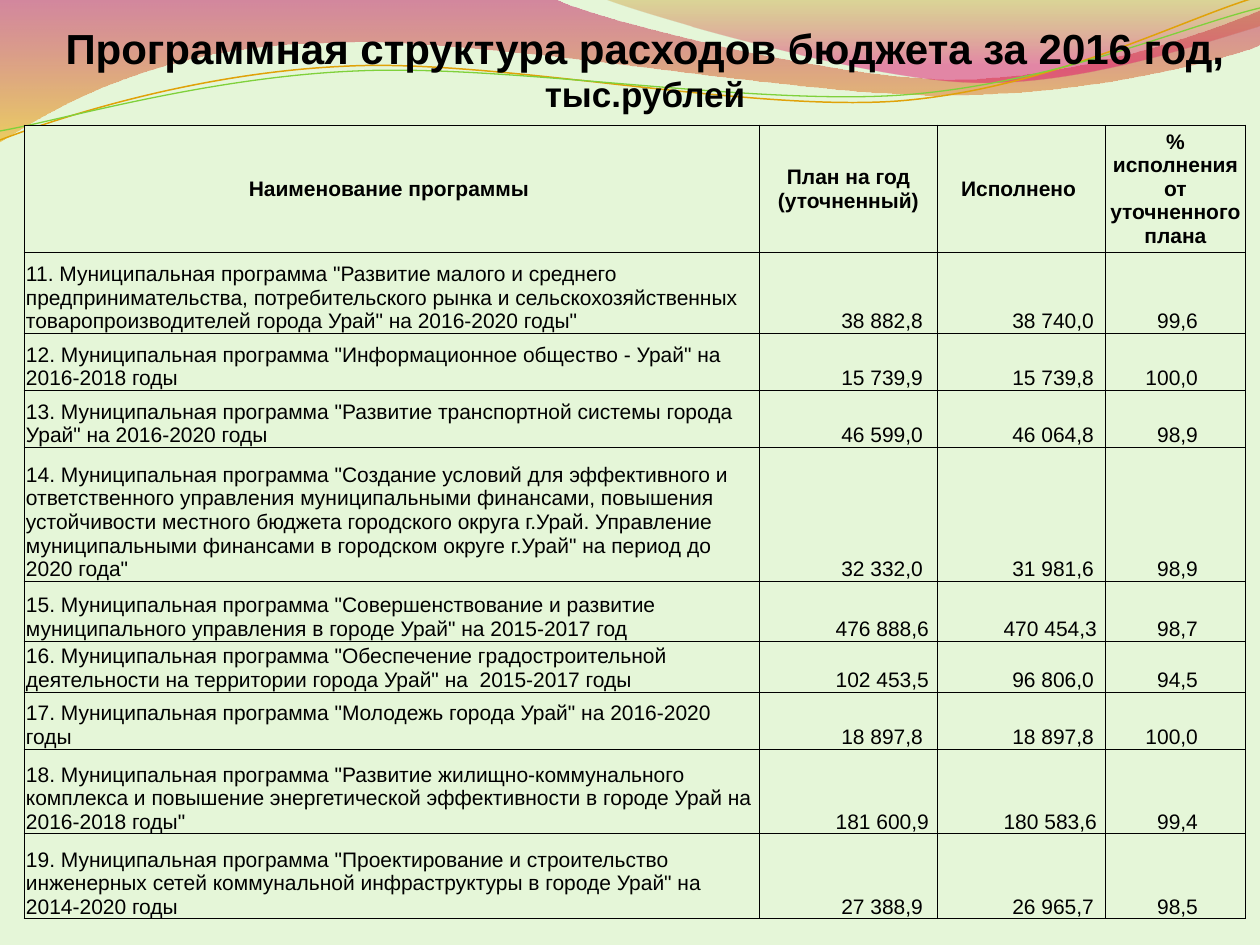
from lxml.etree import SubElement
from pptx import Presentation
from pptx.dml.color import RGBColor
from pptx.enum.text import MSO_ANCHOR as Anchor, PP_ALIGN as Align
from pptx.oxml.ns import qn
from pptx.util import Pt

SCALE = 914400 / 126
PAGE_BOX = (0, 0, 1260, 945)
FONT, INK, PAPER = "Arial", "000000", "E5F6D8"

BANDS = [
    ([(0, 0), (554, -1), (600, 21, 837, 79, 955, 79), (1074, 79, 1207, 33, 1260, 11),
      (1261, 45), (1239, 55, 1096, 96, 940, 95), (783, 95, 481, 35, 324, 43),
      (163, 45, 58, 105, -1, 142), (0, 0)],
     [("BD0059", 45, 0), ("F0AB00", 55, 1)]),
    ([(604, -1), (641, 14, 859, 78, 969, 82), (1079, 87, 1211, 40, 1260, 26), (1260, 0),
      (604, -1)],
     [("C38B00", 30, 0), ("E1006B", 45, 0.8)]),
]
WAVES = [
    ([(0, 140), (60, 117, 199, 72, 349, 66), (498, 59, 747, 112, 898, 101),
      (1050, 89, 1182, 19, 1257, -3)], "E0A209", 0.85),
    ([(0, 131), (59, 121, 207, 77, 357, 71), (508, 64, 752, 106, 903, 95),
      (1053, 84, 1185, 26, 1260, 8)], "7FD13B", 0.75),
]

HEADERS = ["Наименование программы ", "План на год (уточненный)", "Исполнено ",
           "% исполнения от уточненного плана"]
PROGRAMS = [
    ('11. Муниципальная программа "Развитие малого и среднего предпринимательства, '
     'потребительского рынка и сельскохозяйственных товаропроизводителей города Урай" '
     'на 2016-2020 годы"', "38 882,8", "38 740,0", "99,6"),
    ('12. Муниципальная программа "Информационное общество - Урай" на 2016-2018 годы',
     "15 739,9", "15 739,8", "100,0"),
    ('13. Муниципальная программа "Развитие транспортной системы города Урай" '
     'на 2016-2020 годы', "46 599,0", "46 064,8", "98,9"),
    ('14. Муниципальная программа "Создание условий для эффективного и ответственного '
     'управления муниципальными финансами, повышения устойчивости местного бюджета '
     'городского округа г.Урай. Управление муниципальными финансами в городском округе '
     'г.Урай" на период до 2020 года"', "32 332,0", "31 981,6", "98,9"),
    ('15. Муниципальная программа "Совершенствование и развитие муниципального '
     'управления в городе Урай" на 2015-2017 год', "476 888,6", "470 454,3", "98,7"),
    ('16. Муниципальная программа "Обеспечение градостроительной деятельности на '
     'территории города Урай" на  2015-2017 годы', "102 453,5", "96 806,0", "94,5"),
    ('17. Муниципальная программа "Молодежь города Урай" на 2016-2020 годы',
     "18 897,8", "18 897,8", "100,0"),
    ('18. Муниципальная программа "Развитие жилищно-коммунального комплекса и повышение '
     'энергетической эффективности в городе Урай на 2016-2018 годы"',
     "181 600,9", "180 583,6", "99,4"),
    ('19. Муниципальная программа "Проектирование и строительство инженерных сетей '
     'коммунальной инфраструктуры в городе Урай" на 2014-2020 годы',
     "27 388,9", "26 965,7", "98,5"),
]
COLUMN_WIDTHS = [735, 178, 168, 140]
ROW_HEIGHTS = [127, 81, 57, 57, 134, 60, 51, 57, 85, 85]
RIGHT_INSETS = [1, 14, 11, 47]
WIDE_INSET = 8


def px(length):
    """Turn pixels into EMU."""
    return round(length * SCALE)


def color(hex_code):
    """Turn a hex string into a colour."""
    return RGBColor.from_string(hex_code)


def set_font(font, size, bold):
    """Give a font the slide's face and ink."""
    font.name, font.size, font.bold = FONT, Pt(size), bold
    font.color.rgb = color(INK)


def bend(segment, controls):
    """Turn a straight path segment into a cubic curve."""
    segment.tag = qn("a:cubicBezTo")
    for index, (x, y) in enumerate(controls):
        point = SubElement(segment, qn("a:pt"), x=str(x), y=str(y))
        segment.insert(index, point)


def add_outline(page, box, steps, close):
    """Draw an outline of lines and curves relative to the box."""
    points = [(px(box[0] + step[-2]), px(box[1] + step[-1])) for step in steps]
    builder = page.shapes.build_freeform(*points[0])
    builder.add_line_segments(points[1:], close=close)
    shape = builder.convert_to_shape()
    shape.shadow.inherit = False
    segments = list(shape.element.spPr.iter(qn("a:lnTo")))
    for segment, step in zip(segments, steps[1:]):
        if len(step) == 6:
            bend(segment, [(px(box[0] + x) - shape.left, px(box[1] + y) - shape.top)
                           for x, y in (step[:2], step[2:4])])
    return shape


def add_backdrop(page, box):
    """Draw the gradient bands and the two wave lines."""
    for steps, stops in BANDS:
        band = add_outline(page, box, steps, True)
        band.line.fill.background()
        band.fill.gradient()
        band.fill.gradient_angle = 270
        for stop, (hex_code, _, position) in zip(band.fill.gradient_stops, stops):
            stop.color.rgb, stop.position = color(hex_code), position
        tints = list(band.element.spPr.iter(qn("a:srgbClr")))
        for tint, (_, opacity, _) in zip(tints, stops):
            SubElement(tint, qn("a:alpha"), val=str(opacity * 1000))
    for steps, hex_code, width in WAVES:
        wave = add_outline(page, box, steps, False)
        wave.fill.background()
        wave.line.color.rgb, wave.line.width = color(hex_code), Pt(width)


def add_title(page, box):
    """Place the two-size heading."""
    frame = page.shapes.add_textbox(*map(px, box)).text_frame
    frame.word_wrap = True
    para = frame.paragraphs[0]
    para.alignment = Align.CENTER
    for text, size in [("Программная структура расходов бюджета за 2016 год, ", 24),
                       ("тыс.рублей", 20)]:
        span = para.add_run()
        span.text = text
        set_font(span.font, size, True)


def add_borders(cell):
    """Rule all four sides of a cell."""
    properties = cell._tc.get_or_add_tcPr()
    for side in ("a:lnL", "a:lnR", "a:lnT", "a:lnB"):
        line = SubElement(properties, qn(side), w=str(Pt(0.5)))
        SubElement(SubElement(line, qn("a:solidFill")), qn("a:srgbClr"), val=INK)


def fill_cell(cell, text, is_header, column):
    """Write and style one table cell."""
    add_borders(cell)
    cell.fill.solid()
    cell.fill.fore_color.rgb = color(PAPER)
    is_wide = len(text) == len("000 000,0")
    body_inset = WIDE_INSET if is_wide else RIGHT_INSETS[column]
    cell.margin_left, cell.margin_right = px(2), px(1 if is_header else body_inset)
    cell.margin_top, cell.margin_bottom = px(1), 0
    cell.vertical_anchor = Anchor.MIDDLE if is_header else Anchor.BOTTOM
    cell.text = text
    para = cell.text_frame.paragraphs[0]
    body_align = Align.RIGHT if column else Align.LEFT
    para.alignment = Align.CENTER if is_header else body_align
    set_font(para.font, 12, is_header)


def add_programs(page, box):
    """Place the table of programmes."""
    rows = [HEADERS, *PROGRAMS]
    table = page.shapes.add_table(len(rows), len(HEADERS), *map(px, box)).table
    table.first_row = table.horz_banding = False
    for column, width in zip(table.columns, COLUMN_WIDTHS):
        column.width = px(width)
    for row, height in zip(table.rows, ROW_HEIGHTS):
        row.height = px(height)
    for row_index, texts in enumerate(rows):
        for column, text in enumerate(texts):
            fill_cell(table.cell(row_index, column), text, row_index == 0, column)


def main():
    """Build and save the slide."""
    deck = Presentation()
    deck.slide_width, deck.slide_height = map(px, PAGE_BOX[2:])
    page = deck.slides.add_slide(deck.slide_layouts[6])
    page.background.fill.solid()
    page.background.fill.fore_color.rgb = color(PAPER)
    add_backdrop(page, PAGE_BOX)
    add_programs(page, (24, 125, sum(COLUMN_WIDTHS), sum(ROW_HEIGHTS)))
    add_title(page, (30, 16, 1230, 106))
    deck.save("out.pptx")


if __name__ == "__main__":
    main()
